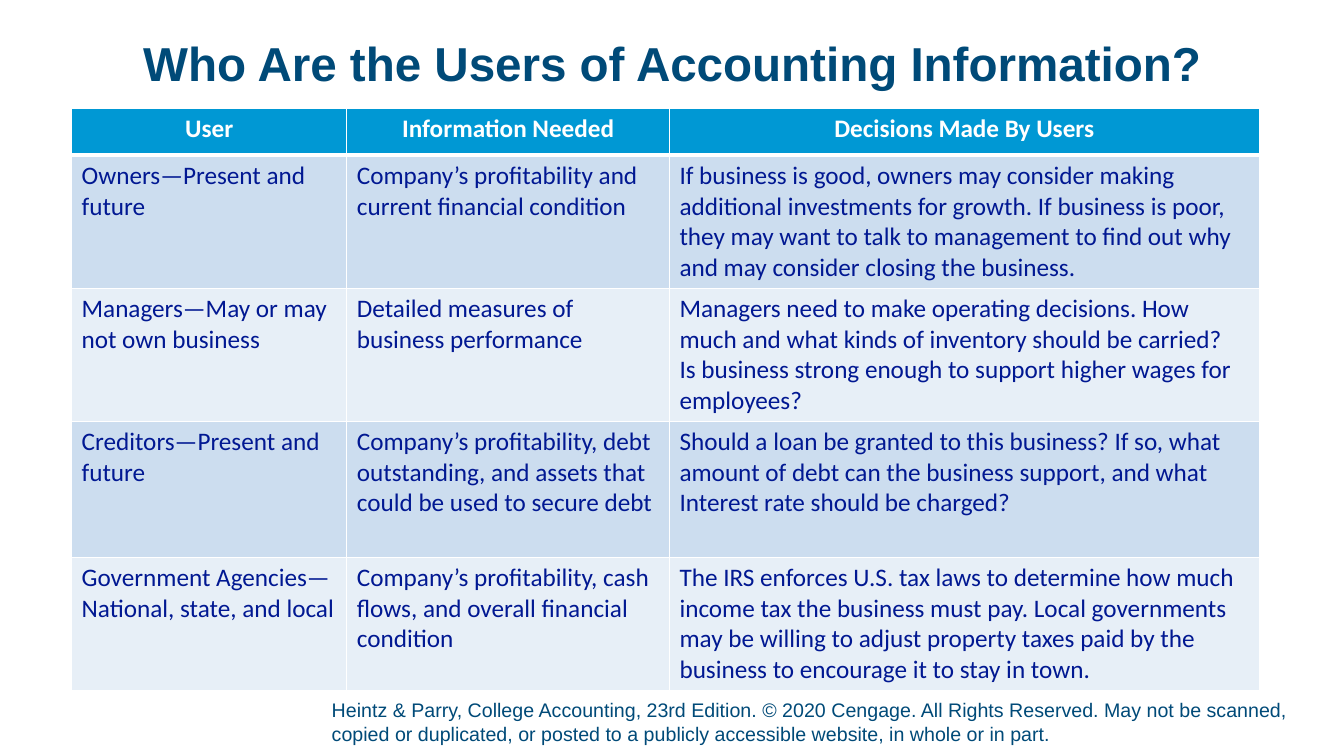
from lxml.etree import SubElement
from pptx import Presentation
from pptx.dml.color import RGBColor
from pptx.enum.text import MSO_ANCHOR, MSO_AUTO_SIZE, PP_ALIGN
from pptx.oxml.ns import qn
from pptx.util import Inches, Pt

NAVY, HEADER_BLUE, TEXT_BLUE, WHITE = "004A78", "0098D4", "011892", "FFFFFF"
BAND_FILLS = ["CCDDEF", "E7EFF7"]
COLUMN_WIDTHS = [2.73, 3.2, 5.85]
ROW_HEIGHTS = [0.46, 1.32, 1.32, 1.35, 1.32]
TITLE = "Who Are the Users of Accounting Information?"
COPYRIGHT = (
    "Heintz & Parry, College Accounting, 23rd Edition. © 2020 Cengage. "
    "All Rights Reserved. May not be scanned, copied or duplicated, or posted "
    "to a publicly accessible website, in whole or in part."
)
USER_ROWS = [
    ("User", "Information Needed", "Decisions Made By Users"),
    (
        "Owners—Present and future",
        "Company’s profitability and current financial condition",
        "If business is good, owners may consider making\n"
        "additional investments for growth. If business is poor,\n"
        "they may want to talk to management to find out why\n"
        "and may consider closing the business.",
    ),
    (
        "Managers—May or may not own business",
        "Detailed measures of business performance",
        "Managers need to make operating decisions. How\n"
        "much and what kinds of inventory should be carried?\n"
        "Is business strong enough to support higher wages for\n"
        "employees?",
    ),
    (
        "Creditors—Present and future",
        "Company’s profitability, debt outstanding, and assets that could be used to secure debt",
        "Should a loan be granted to this business? If so, what\n"
        "amount of debt can the business support, and what\n"
        "Interest rate should be charged?",
    ),
    (
        "Government Agencies—National, state, and local",
        "Company’s profitability, cash flows, and overall financial condition",
        "The IRS enforces U.S. tax laws to determine how much\n"
        "income tax the business must pay. Local governments\n"
        "may be willing to adjust property taxes paid by the\n"
        "business to encourage it to stay in town.",
    ),
]


def color(hex_string):
    """Turn a hex string into a colour."""
    return RGBColor.from_string(hex_string)


def format_text(text_frame, font_name, size, hex_string, bold=False, alignment=PP_ALIGN.LEFT):
    """Format every run of a text frame."""
    for paragraph in text_frame.paragraphs:
        paragraph.alignment = alignment
        for run in paragraph.runs:
            run.font.name = font_name
            run.font.size = Pt(size)
            run.font.bold = bold
            run.font.color.rgb = color(hex_string)


def set_insets(text_frame, bottom=0):
    """Remove the insets of a text frame, except the bottom one."""
    text_frame.margin_left = text_frame.margin_right = text_frame.margin_top = 0
    text_frame.margin_bottom = Inches(bottom)


def add_border(cell, side, width):
    """Draw a white border on one side of a cell."""
    line = SubElement(cell._tc.get_or_add_tcPr(), qn(f"a:ln{side}"), w=str(Pt(width)))
    fill = SubElement(line, qn("a:solidFill"))
    SubElement(fill, qn("a:srgbClr"), val=WHITE)


def add_title(slide, left, top, width, height):
    """Place and format the slide title."""
    title = slide.shapes.title
    title.left, title.top = Inches(left), Inches(top)
    title.width, title.height = Inches(width), Inches(height)
    text_frame = title.text_frame
    text_frame.text = TITLE
    text_frame.vertical_anchor = MSO_ANCHOR.TOP
    text_frame.auto_size = MSO_AUTO_SIZE.NONE
    set_insets(text_frame)
    format_text(text_frame, "Arial", 34, NAVY, True, PP_ALIGN.CENTER)
    text_frame.paragraphs[0].line_spacing = 0.9


def fill_cell(cell, text, row_index):
    """Write one table cell, styled by its row."""
    is_header = row_index == 0
    for side in "LRTB":
        is_thick = (is_header and side == "B") or (row_index == 1 and side == "T")
        add_border(cell, side, 3 if is_thick else 1)
    cell.fill.solid()
    cell.fill.fore_color.rgb = color(HEADER_BLUE if is_header else BAND_FILLS[(row_index - 1) % 2])
    cell.text_frame.text = text
    if is_header:
        format_text(cell.text_frame, "Calibri", 18, WHITE, True, PP_ALIGN.CENTER)
    else:
        format_text(cell.text_frame, "Calibri", 18, TEXT_BLUE)


def add_users_table(slide, left, top):
    """Build the table of users, information and decisions."""
    table = slide.shapes.add_table(
        len(ROW_HEIGHTS), len(COLUMN_WIDTHS), Inches(left), Inches(top),
        Inches(sum(COLUMN_WIDTHS)), Inches(sum(ROW_HEIGHTS)),
    ).table
    for column, width in zip(table.columns, COLUMN_WIDTHS):
        column.width = Inches(width)
    for row, height in zip(table.rows, ROW_HEIGHTS):
        row.height = Inches(height)
    for row_index, texts in enumerate(USER_ROWS):
        for column_index, text in enumerate(texts):
            fill_cell(table.cell(row_index, column_index), text, row_index)


def add_copyright(slide, left, top, width, height):
    """Add the copyright line at the foot of the slide."""
    box = slide.shapes.add_textbox(Inches(left), Inches(top), Inches(width), Inches(height))
    text_frame = box.text_frame
    text_frame.word_wrap = True
    text_frame.auto_size = MSO_AUTO_SIZE.SHAPE_TO_FIT_TEXT
    text_frame.vertical_anchor = MSO_ANCHOR.BOTTOM
    set_insets(text_frame, 0.05)
    text_frame.text = COPYRIGHT
    format_text(text_frame, "Arial", 14, NAVY)


def main():
    """Build and save the presentation."""
    presentation = Presentation()
    presentation.slide_width, presentation.slide_height = Inches(13.33), Inches(7.5)
    slide = presentation.slides.add_slide(presentation.slide_layouts[5])
    add_copyright(slide, 3.29, 6.92, 9.79, 0.52)
    add_title(slide, 0.92, 0.4, 11.5, 0.51)
    add_users_table(slide, 0.71, 1.08)
    presentation.save("out.pptx")


if __name__ == "__main__":
    main()
